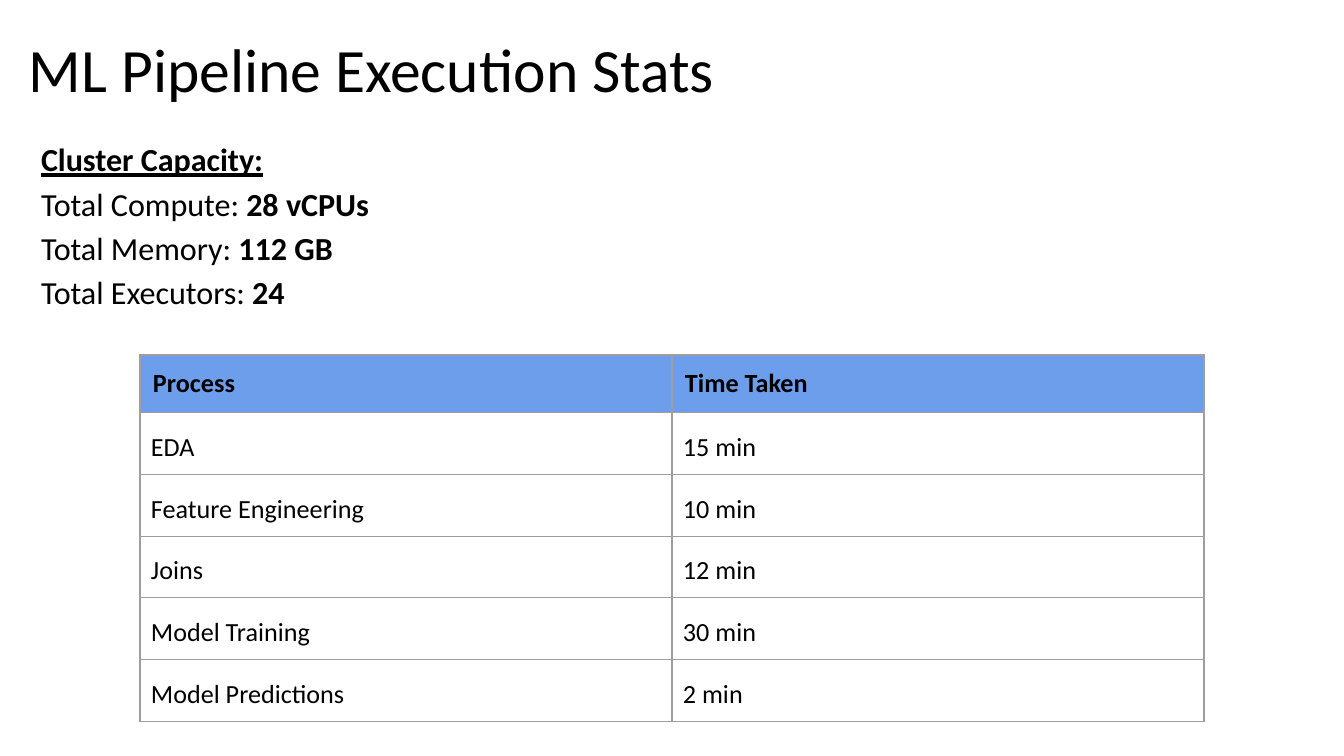
import pptx
import pptx.util
from pptx.dml.color import RGBColor
from pptx.enum.text import MSO_ANCHOR, MSO_AUTO_SIZE, PP_ALIGN
from pptx.oxml.ns import qn
from lxml import etree

EMU_PER_PX = 914400 / 134.4
FONT = "Calibri"
BLACK, HEADER_BLUE, BORDER_GREY = "000000", "6D9EEB", "9E9E9E"

CAPACITY = [
    ("Total Compute: ", "28 vCPUs"),
    ("Total Memory: ", "112 GB"),
    ("Total Executors: ", "24"),
]
TIMINGS = [
    ("Process", "Time Taken"),
    ("EDA", "15 min"),
    ("Feature Engineering", "10 min"),
    ("Joins", "12 min"),
    ("Model Training", "30 min"),
    ("Model Predictions", "2 min"),
]


def px(length):
    return pptx.util.Emu(round(length * EMU_PER_PX))


def color(value):
    return RGBColor.from_string(value)


def add_run(paragraph, text, size, bold=False, underline=False):
    run = paragraph.add_run()
    run.text = text
    font = run.font
    font.name, font.size = FONT, pptx.util.Pt(size)
    font.bold, font.underline = bold, underline
    font.color.rgb = color(BLACK)


def format_paragraph(paragraph, line_spacing, space_before=0):
    paragraph.alignment = PP_ALIGN.LEFT
    paragraph.line_spacing = line_spacing
    paragraph.space_before = pptx.util.Pt(space_before)
    paragraph.space_after = pptx.util.Pt(0)


def remove_bullet(paragraph):
    properties = paragraph._p.get_or_add_pPr()
    properties.set("marL", "0")
    properties.set("indent", "0")
    etree.SubElement(properties, qn("a:buNone"))


def place_placeholder(shape, left, top, width, height, anchor):
    shape.left, shape.top = px(left), px(top)
    shape.width, shape.height = px(width), px(height)
    frame = shape.text_frame
    frame.word_wrap = True
    frame.auto_size = MSO_AUTO_SIZE.NONE
    frame.vertical_anchor = anchor
    frame.margin_left = frame.margin_right = px(9)
    frame.margin_top = frame.margin_bottom = px(5)
    return frame


def fill_title(shape):
    frame = place_placeholder(shape, 20, 0, 1159, 146, MSO_ANCHOR.MIDDLE)
    paragraph = frame.paragraphs[0]
    format_paragraph(paragraph, 0.9)
    add_run(paragraph, "ML Pipeline Execution Stats", 33)


def fill_capacity(shape):
    frame = place_placeholder(shape, 32, 129, 1159, 480, MSO_ANCHOR.TOP)
    heading = frame.paragraphs[0]
    add_run(heading, "Cluster Capacity:", 17.2, bold=True, underline=True)
    for label, value in CAPACITY:
        paragraph = frame.add_paragraph()
        add_run(paragraph, label, 17.2)
        add_run(paragraph, value, 17.2, bold=True)
    for paragraph in frame.paragraphs:
        format_paragraph(paragraph, 1.15)
        remove_bullet(paragraph)


def add_borders(cell):
    properties = cell._tc.get_or_add_tcPr()
    for side in ("lnL", "lnR", "lnT", "lnB"):
        line = etree.SubElement(properties, qn("a:" + side), w=str(pptx.util.Pt(0.75)))
        fill = etree.SubElement(line, qn("a:solidFill"))
        etree.SubElement(fill, qn("a:srgbClr"), val=BORDER_GREY)


def fill_cell(cell, text, is_header):
    margin = px(13 if is_header else 11)
    cell.margin_left = cell.margin_right = margin
    cell.margin_top = cell.margin_bottom = margin
    add_borders(cell)
    paragraph = cell.text_frame.paragraphs[0]
    if is_header:
        cell.fill.solid()
        cell.fill.fore_color.rgb = color(HEADER_BLUE)
        format_paragraph(paragraph, 1.0)
    else:
        cell.fill.background()
        format_paragraph(paragraph, 1.25, space_before=12)
    add_run(paragraph, text, 14, bold=is_header)


def add_timing_table(slide):
    column_width, row_height = 532, 57
    rows, columns = len(TIMINGS), len(TIMINGS[0])
    table = slide.shapes.add_table(
        rows, columns, px(140), px(355),
        px(columns * column_width), px(rows * row_height)).table
    table.first_row = table.horz_banding = False
    for column in table.columns:
        column.width = px(column_width)
    for row_index, texts in enumerate(TIMINGS):
        table.rows[row_index].height = px(row_height)
        for column_index, text in enumerate(texts):
            fill_cell(table.cell(row_index, column_index), text, row_index == 0)


def main():
    presentation = pptx.Presentation()
    presentation.slide_width, presentation.slide_height = px(1344), px(756)
    slide = presentation.slides.add_slide(presentation.slide_layouts[1])

    # Title and cluster figures
    fill_title(slide.shapes.title)
    fill_capacity(slide.placeholders[1])

    # Time per pipeline step
    add_timing_table(slide)

    presentation.save("out.pptx")


if __name__ == "__main__":
    main()
